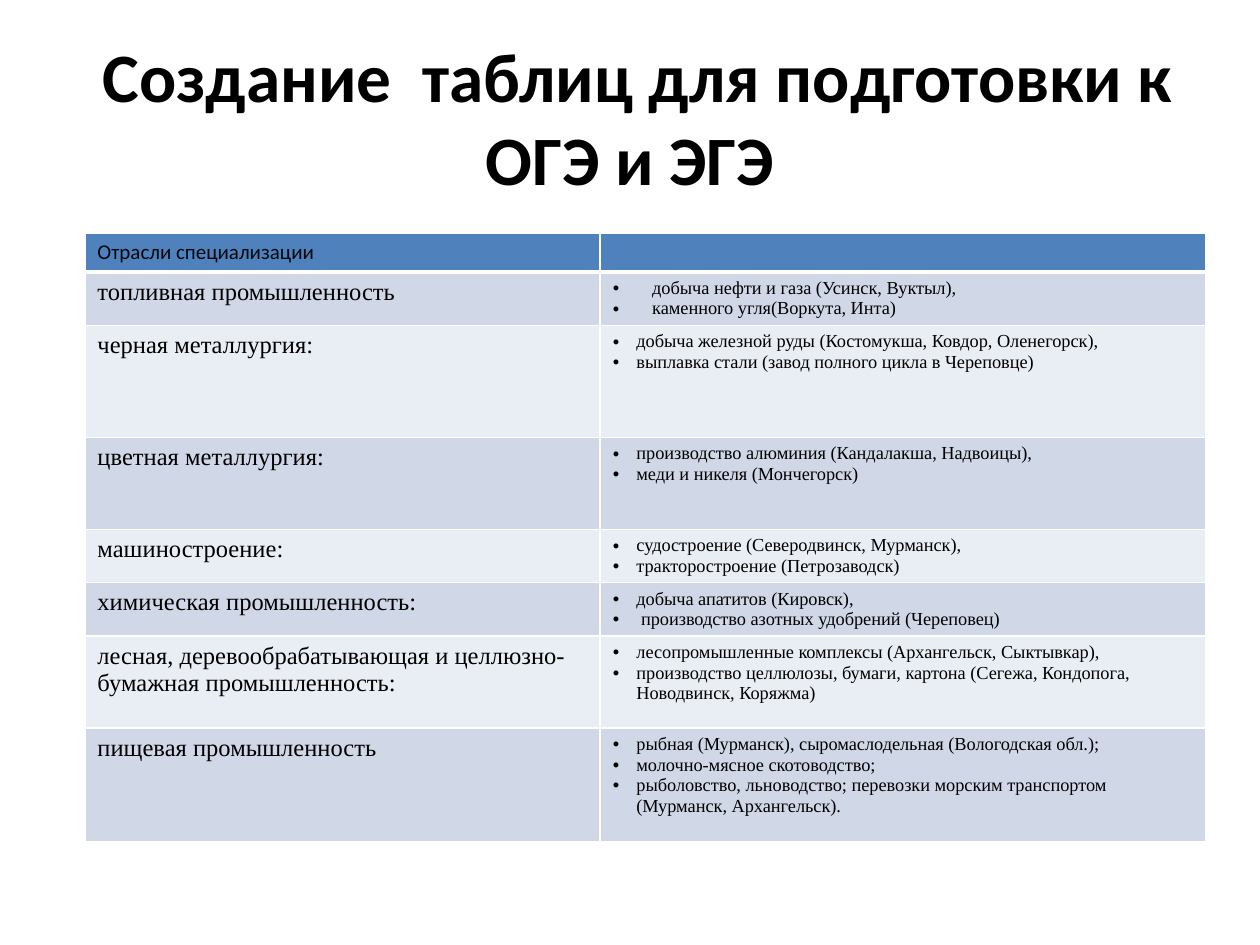
from dataclasses import dataclass
from lxml.etree import SubElement
from pptx import Presentation
from pptx.dml.color import RGBColor
from pptx.enum.text import MSO_ANCHOR, MSO_AUTO_SIZE, PP_ALIGN
from pptx.oxml.ns import qn
from pptx.util import Pt


@dataclass(frozen=True)
class Theme:
    title_font: str = "Calibri"
    table_font: str = "Times New Roman"
    title_size: float = 39.6
    header_size: float = 12
    branch_size: float = 14
    detail_size: float = 10.5
    text: str = "000000"
    header_text: str = "03070C"
    header_fill: str = "4F81BD"
    bands: tuple = ("D0D8E8", "E9EDF4")
    border: str = "FFFFFF"


theme = Theme()

# Branch, row height, bullet indent, details
ROWS = [
    ("топливная промышленность", 30.3, 22.5,
     ["добыча нефти и газа (Усинск, Вуктыл),",
      "каменного угля(Воркута, Инта)"]),
    ("черная металлургия:", 64, 13.5,
     ["добыча железной руды (Костомукша, Ковдор, Оленегорск),",
      "выплавка стали (завод полного цикла в Череповце)"]),
    ("цветная металлургия:", 52.6, 13.5,
     ["производство алюминия (Кандалакша, Надвоицы),",
      "меди и никеля (Мончегорск)"]),
    ("машиностроение:", 30.3, 13.5,
     ["судостроение (Северодвинск, Мурманск),",
      "тракторостроение (Петрозаводск)"]),
    ("химическая промышленность:", 30.3, 13.5,
     ["добыча апатитов (Кировск),",
      " производство азотных удобрений (Череповец)"]),
    ("лесная, деревообрабатывающая и целлюзно-бумажная промышленность:", 52.6, 13.5,
     ["лесопромышленные комплексы (Архангельск, Сыктывкар),",
      "производство целлюлозы, бумаги, картона (Сегежа, Кондопога, Новодвинск, Коряжма)"]),
    ("пищевая промышленность", 65, 13.5,
     ["рыбная (Мурманск), сыромаслодельная (Вологодская обл.);",
      "молочно-мясное скотоводство;",
      "рыболовство, льноводство; перевозки морским транспортом (Мурманск, Архангельск)."]),
]
HEADER_HEIGHT = 21.5


def add_run(p, text, font, size, color, bold=False):
    r = p.add_run()
    r.text = text
    r.font.name = font
    r.font.size = Pt(size)
    r.font.bold = bold
    r.font.color.rgb = RGBColor.from_string(color)


def style_cell(cell, fill, bottom=1):
    tc_pr = cell._tc.get_or_add_tcPr()
    for side, width in (("L", 1), ("R", 1), ("T", 1), ("B", bottom)):
        ln = SubElement(tc_pr, qn(f"a:ln{side}"), w=str(Pt(width)))
        SubElement(SubElement(ln, qn("a:solidFill")), qn("a:srgbClr"), val=theme.border)
    cell.fill.solid()
    cell.fill.fore_color.rgb = RGBColor.from_string(fill)


prs = Presentation()
prs.slide_width, prs.slide_height = Pt(720), Pt(540)
s = prs.slides.add_slide(prs.slide_layouts[5])

# Title
title = s.shapes.title
title.left, title.top, title.width, title.height = Pt(36), Pt(21.6), Pt(648), Pt(90)
tf = title.text_frame
tf.word_wrap = True
tf.auto_size = MSO_AUTO_SIZE.NONE
tf.vertical_anchor = MSO_ANCHOR.MIDDLE
p = tf.paragraphs[0]
p.alignment = PP_ALIGN.CENTER
add_run(p, " ", theme.title_font, theme.title_size, theme.text)
add_run(p, "Создание  таблиц для подготовки к ОГЭ и ЭГЭ",
        theme.title_font, theme.title_size, theme.text, True)

# Table grid
height = HEADER_HEIGHT + sum(row[1] for row in ROWS)
table = s.shapes.add_table(len(ROWS) + 1, 2, Pt(48.5), Pt(133.5), Pt(640.5), Pt(height)).table
table.columns[0].width, table.columns[1].width = Pt(294.5), Pt(346)

# Header row
table.rows[0].height = Pt(HEADER_HEIGHT)
for cell in table.rows[0].cells:
    style_cell(cell, theme.header_fill, 3)
add_run(table.cell(0, 0).text_frame.paragraphs[0], "Отрасли специализации",
        theme.title_font, theme.header_size, theme.header_text)
SubElement(table.cell(0, 1).text_frame.paragraphs[0]._p, qn("a:endParaRPr"),
           sz=str(theme.header_size * 100))

# Branches with bulleted details
for i, (branch, row_height, indent, details) in enumerate(ROWS, 1):
    table.rows[i].height = Pt(row_height)
    for cell in table.rows[i].cells:
        style_cell(cell, theme.bands[(i - 1) % 2])
    add_run(table.cell(i, 0).text_frame.paragraphs[0], branch,
            theme.table_font, theme.branch_size, theme.text)
    tf = table.cell(i, 1).text_frame
    for j, detail in enumerate(details):
        p = tf.add_paragraph() if j else tf.paragraphs[0]
        p_pr = p._p.get_or_add_pPr()
        p_pr.set("marL", str(Pt(indent)))
        p_pr.set("indent", str(-Pt(indent)))
        SubElement(p_pr, qn("a:buFont"), typeface="Arial")
        SubElement(p_pr, qn("a:buChar"), char="•")
        add_run(p, detail, theme.table_font, theme.detail_size, theme.text)

prs.save("out.pptx")
